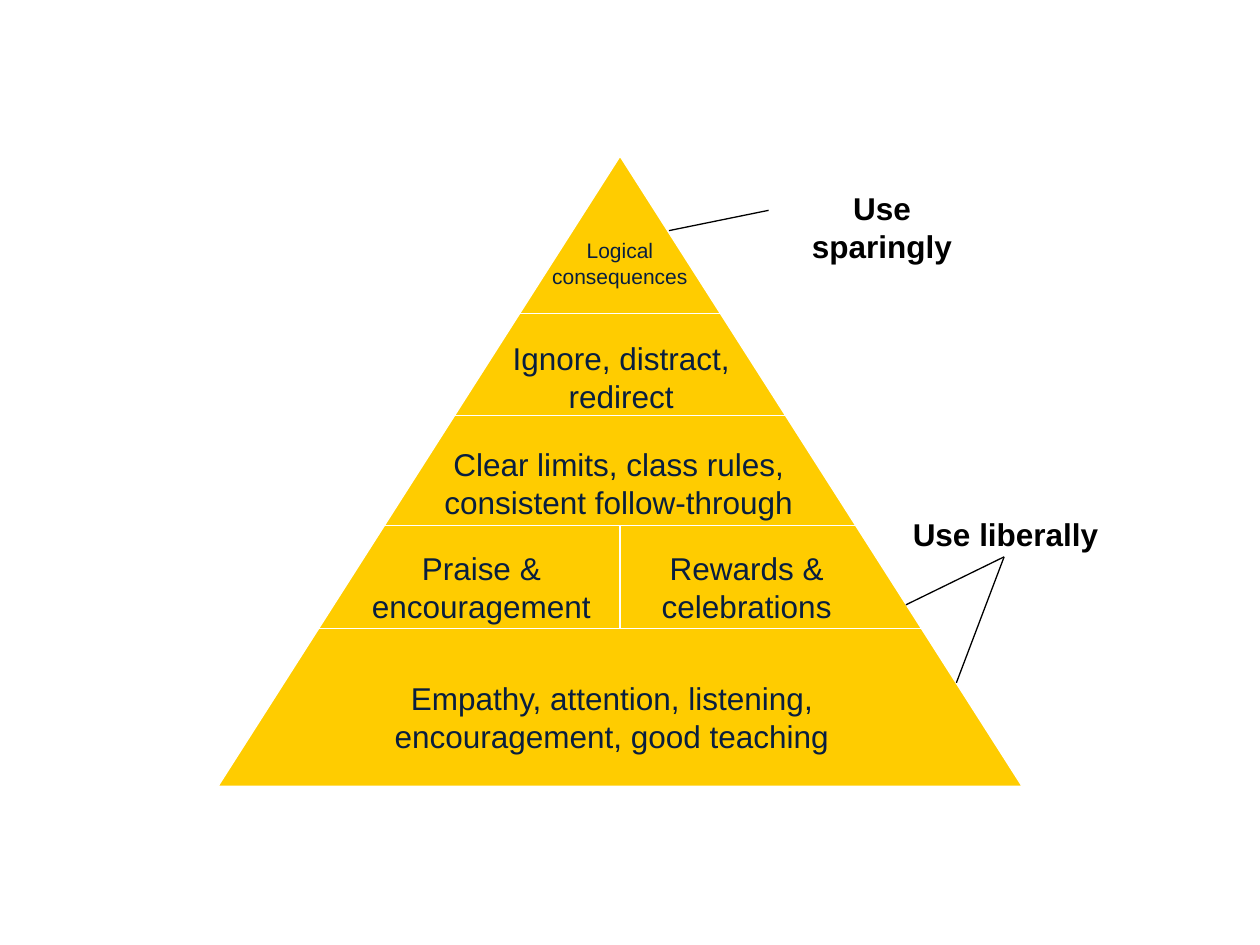
from dataclasses import dataclass

from lxml.etree import SubElement
from pptx import Presentation
from pptx.dml.color import RGBColor
from pptx.enum.shapes import MSO_CONNECTOR as Connector, MSO_SHAPE as Preset
from pptx.enum.text import MSO_AUTO_SIZE as AutoSize, PP_ALIGN as Align
from pptx.oxml.ns import qn
from pptx.util import Pt


@dataclass(frozen=True)
class Theme:
    gold: RGBColor = RGBColor(0xFF, 0xCC, 0x00)
    navy: RGBColor = RGBColor(0x08, 0x1E, 0x3F)
    black: RGBColor = RGBColor(0, 0, 0)
    white: RGBColor = RGBColor(0xFF, 0xFF, 0xFF)
    font: str = "Arial"
    body: int = 18
    small: int = 12
    line: float = 0.75


theme = Theme()
deck = Presentation()
deck.slide_width, deck.slide_height = Pt(720), Pt(540)
page = deck.slides.add_slide(deck.slide_layouts[6])


def add_text(text, *, left, top, width, height=51, size=theme.body,
             color=theme.navy, bold=False):
    box = page.shapes.add_textbox(Pt(left), Pt(top), Pt(width), Pt(height))
    box.text_frame.word_wrap = True
    box.text_frame.auto_size = AutoSize.SHAPE_TO_FIT_TEXT
    para = box.text_frame.paragraphs[0]
    para.alignment = Align.CENTER
    span = para.add_run()
    span.text = text
    span.font.name = theme.font
    span.font.size = Pt(size)
    span.font.bold = bold
    span.font.color.rgb = color


def add_line(start, end, color):
    line = page.shapes.add_connector(
        Connector.STRAIGHT, Pt(start[0]), Pt(start[1]), Pt(end[0]), Pt(end[1]))
    line.line.color.rgb = color
    line.line.width = Pt(theme.line)
    SubElement(line._element.spPr, qn("a:effectLst"))


# Pyramid
left, apex, width, height = 124.6, 89.3, 459.4, 360
center = left + width / 2
pyramid = page.shapes.add_shape(
    Preset.ISOSCELES_TRIANGLE, Pt(left), Pt(apex), Pt(width), Pt(height))
pyramid.shadow.inherit = False
pyramid.fill.solid()
pyramid.fill.fore_color.rgb = theme.gold
pyramid.line.color.rgb = theme.white
pyramid.line.width = Pt(theme.line)

# Tier dividers reach from one sloping side to the other
dividers = [179.3, 237.6, 300.2, 359.3]
for y in dividers:
    half = width / 2 * (y - apex) / height
    add_line((center - half, y), (center + half, y), theme.white)
add_line((center, dividers[2]), (center, dividers[3]), theme.white)

# Tier labels, from the base up
tiers = [
    ("Empathy, attention, listening, encouragement, good teaching", 196.6, 384.5, 306),
    ("Praise & encouragement", 205.2, 310.3, 139.7),
    ("Rewards & celebrations", 369.4, 310.3, 114.5),
    ("Clear limits, class rules, consistent follow-through", 243.4, 250.6, 220.3),
    ("Ignore, distract, redirect", 283, 190.1, 144),
]
for text, x, y, label_width in tiers:
    add_text(text, left=x, top=y, width=label_width)
add_text("Logical consequences", left=302.4, top=132.5, width=103.7, height=36,
         size=theme.small)

# Callouts beside the pyramid
liberal_tip = (573.8, 318.2)
pointers = [
    ((517.7, 345.6), liberal_tip),
    ((546.5, 390.2), liberal_tip),
    ((382.3, 131.8), (439.2, 120.2)),
]
for start, end in pointers:
    add_line(start, end, theme.black)
add_text("Use liberally", left=509.8, top=290.9, width=129.6, height=29,
         color=theme.black, bold=True)
add_text("Use sparingly", left=439.2, top=104.4, width=129.6,
         color=theme.black, bold=True)

deck.save("out.pptx")
